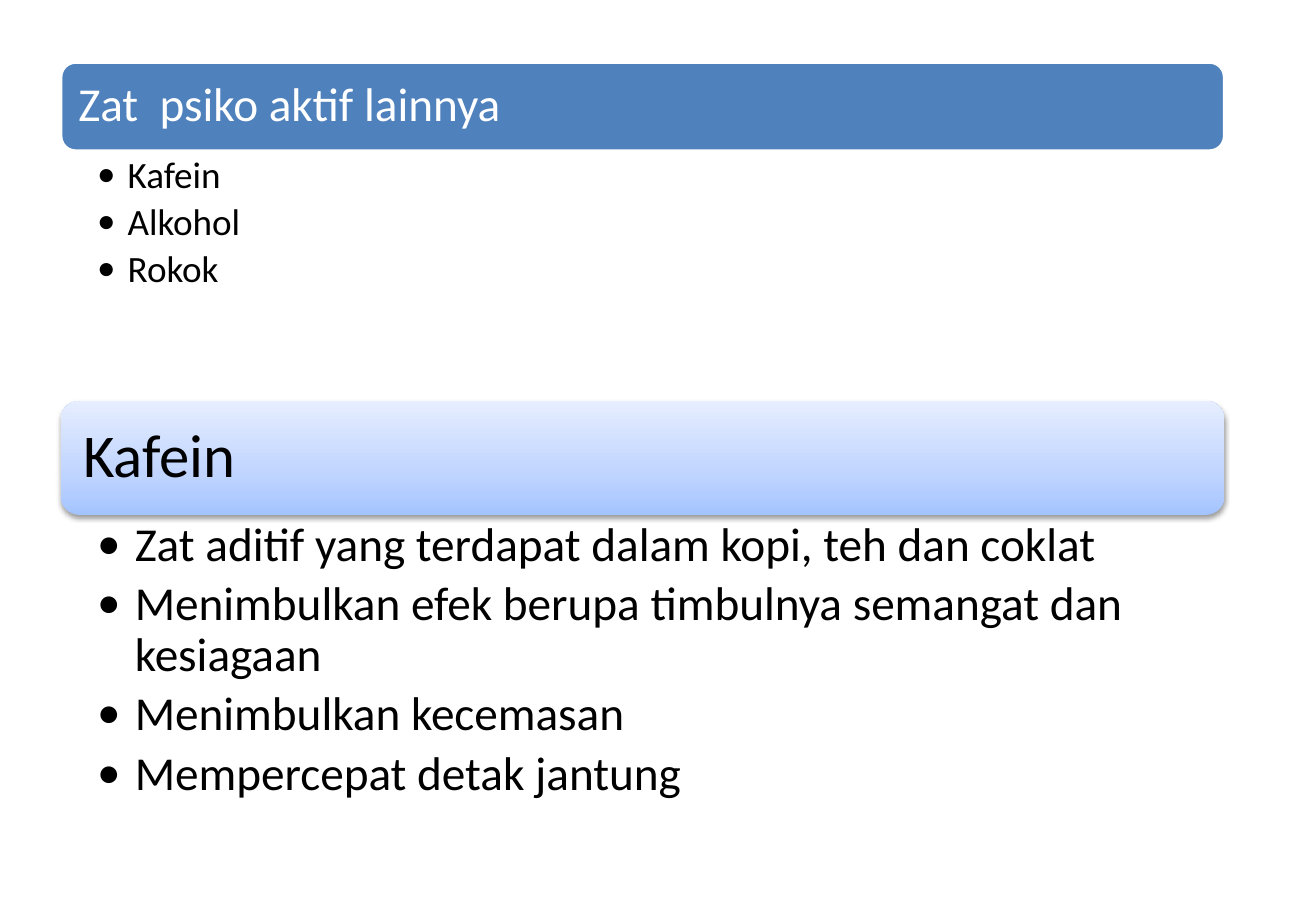
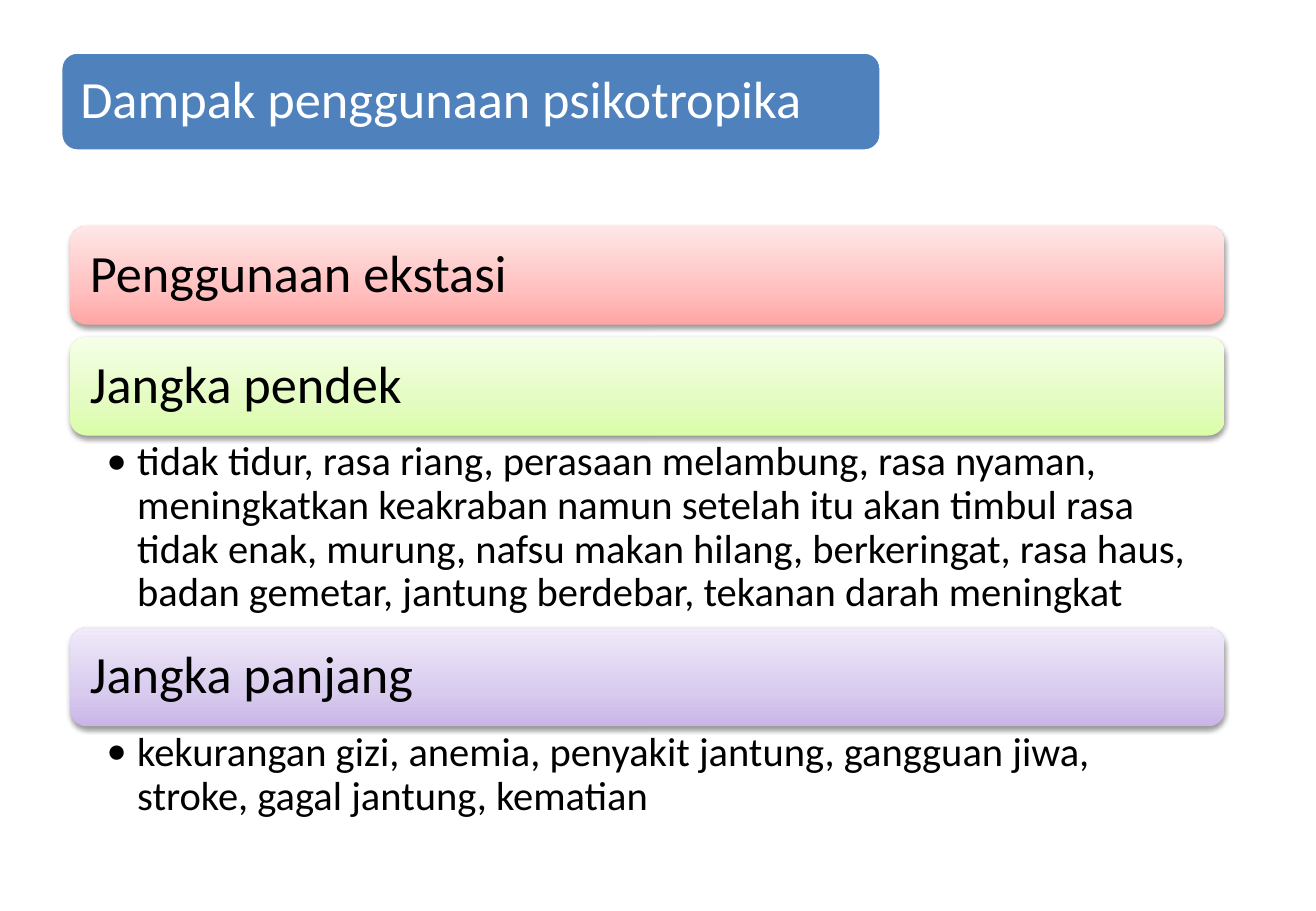
"""Builds two slides of coloured heading bands with bulleted text beneath them."""
from copy import deepcopy

from lxml.etree import SubElement
from pptx import Presentation
from pptx.dml.color import RGBColor
from pptx.enum.shapes import MSO_SHAPE
from pptx.enum.text import MSO_ANCHOR, PP_ALIGN
from pptx.oxml.ns import qn
from pptx.util import Cm, Pt

FONT = "Calibri"
BLACK, WHITE, BLUE = "000000", "FFFFFF", "4F81BD"
ICE = ("A4C4FF", "BFD4FF", "E6EEFF")
ROSE = ("FFA6A5", "FFC0BF", "FFE7E7")
LIME = ("DAFDA7", "E4FCC2", "F5FFE7")
LILAC = ("C9B5E8", "D8CBEE", "F0EAF9")
STOPS = (0, 0.35, 1)
GAP = 0.25


def rgb(code):
    return RGBColor.from_string(code)


def write(tf, lines, size, color, after):
    tf.word_wrap = True
    for i, line in enumerate(lines):
        p = tf.paragraphs[0] if i == 0 else tf.add_paragraph()
        p.alignment = PP_ALIGN.LEFT
        p.line_spacing = 0.9
        p.space_after = Pt(after)
        r = p.add_run()
        r.text = line
        r.font.name = FONT
        r.font.size = Pt(size)
        r.font.color.rgb = rgb(color)


# stack: left, top, width, band height, band text size, bullet text size, bullet indent, sections
# section: band text, fill, bullets, height of bullets
SLIDES = [
    [
        (1.27, 8.38, 24.33, 2.39, 36, 28, 0.79, [
            ("Kafein", ICE, [
                "Zat aditif yang terdapat dalam kopi, teh dan coklat",
                "Menimbulkan efek berupa timbulnya semangat dan kesiagaan",
                "Menimbulkan kecemasan",
                "Mempercepat detak jantung",
            ], 6.43),
        ]),
        (1.27, 1.3, 24.33, 1.86, 28, 22, 0.64, [
            ("Zat  psiko aktif lainnya", BLUE, ["Kafein", "Alkohol", "Rokok"], 3.15),
        ]),
    ],
    [
        (1.47, 4.72, 24.13, 2.07, 31, 24, 0.64, [
            ("Penggunaan ekstasi", ROSE, [], GAP),
            ("Jangka pendek", LIME, [
                "tidak tidur, rasa riang, perasaan melambung, rasa nyaman, "
                "meningkatkan keakraban namun setelah itu akan timbul rasa "
                "tidak enak, murung, nafsu makan hilang, berkeringat, rasa haus, "
                "badan gemetar, jantung berdebar, tekanan darah meningkat",
            ], 4.01),
            ("Jangka panjang", LILAC, [
                "kekurangan gizi, anemia, penyakit jantung, gangguan jiwa, "
                "stroke, gagal jantung, kematian",
            ], 2.08),
        ]),
        (1.27, 1.09, 17.15, 2.07, 31, 24, 0.64, [
            ("Dampak penggunaan psikotropika", BLUE, [], GAP),
        ]),
    ],
]

prs = Presentation()
prs.slide_width, prs.slide_height = Cm(27.51), Cm(19.05)

for stacks in SLIDES:
    s = prs.slides.add_slide(prs.slide_layouts[6])
    for left, top, width, height, band_size, body_size, indent, sections in stacks:
        for title, fill, bullets, body_height in sections:
            sp = s.shapes.add_shape(MSO_SHAPE.ROUNDED_RECTANGLE, Cm(left), Cm(top),
                                    Cm(width), Cm(height))
            sp.shadow.inherit = False
            if fill == BLUE:
                sp.fill.solid()
                sp.fill.fore_color.rgb = rgb(fill)
                sp.line.color.rgb = rgb(WHITE)
                sp.line.width = Pt(2)
            else:
                sp.line.fill.background()
                sp.fill.gradient()
                sp.fill.gradient_angle = 90
                spPr = sp._element.spPr
                stops = spPr.find(qn("a:gradFill")).find(qn("a:gsLst"))
                stops.append(deepcopy(stops[0]))
                for stop, position, code in zip(sp.fill.gradient_stops, STOPS, fill):
                    stop.position = position
                    stop.color.rgb = rgb(code)
                shadow = SubElement(spPr.find(qn("a:effectLst")), qn("a:outerShdw"),
                                    blurRad="40000", dist="20000", dir="5400000", rotWithShape="0")
                black = SubElement(shadow, qn("a:srgbClr"), val=BLACK)
                SubElement(black, qn("a:alpha"), val="38000")
            tf = sp.text_frame
            tf.vertical_anchor = MSO_ANCHOR.MIDDLE
            tf.margin_left = tf.margin_right = Cm(band_size * 0.01)
            tf.margin_top = tf.margin_bottom = Cm(band_size * 0.01)
            write(tf, [title], band_size, WHITE if fill == BLUE else BLACK, 0)
            top += height

            if bullets:
                tf = s.shapes.add_textbox(Cm(left), Cm(top), Cm(width), Cm(body_height)).text_frame
                tf.margin_left, tf.margin_right = Cm(0.76), Cm(body_size * 0.025)
                tf.margin_top = tf.margin_bottom = Cm(0.11)
                write(tf, bullets, body_size, BLACK, round(body_size * 0.18))
                for p in tf.paragraphs:
                    p.level = 1
                    pPr = p._p.get_or_add_pPr()
                    pPr.set("marL", str(Cm(indent)))
                    pPr.set("indent", str(-Cm(indent)))
                    SubElement(pPr, qn("a:buFont"), typeface=FONT)
                    SubElement(pPr, qn("a:buChar"), char="•")
            top += body_height

prs.save("out.pptx")
